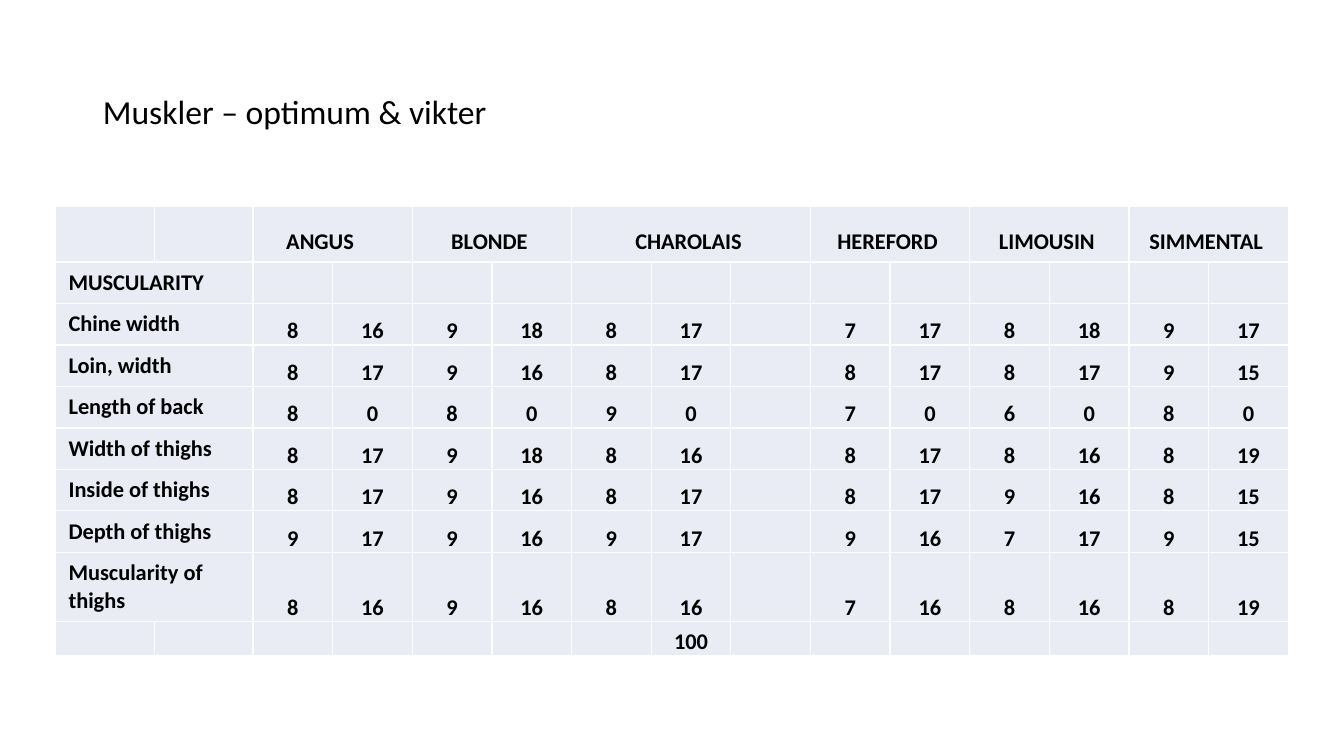
from dataclasses import dataclass

import pptx
import pptx.dml.color
import pptx.enum.text
import pptx.oxml
import pptx.oxml.ns
import pptx.table
import pptx.text.text
import pptx.util

Inches = pptx.util.Inches
Align = pptx.enum.text.PP_ALIGN
Anchor = pptx.enum.text.MSO_ANCHOR

BLACK = pptx.dml.color.RGBColor(0x00, 0x00, 0x00)
WHITE = pptx.dml.color.RGBColor(0xFF, 0xFF, 0xFF)
LAVENDER = pptx.dml.color.RGBColor(0xE9, 0xEB, 0xF5)

LABEL_SPAN = 2
COLUMN_WIDTHS = [0.98] * LABEL_SPAN + [0.79] * 13
ROW_HEIGHTS = [0.55] + [0.34] * 7 + [0.67, 0.34]
WIDE_MARGINS = (0.13, 0.07, 0.13, 0.07)
TIGHT_MARGINS = (0.01, 0.01, 0.01, 0)


@dataclass(frozen=True)
class Breed:
    name: str
    column: int
    span: int = 2
    right_margin: float = 0.13


@dataclass(frozen=True)
class Trait:
    label: str
    optimum_and_weight: tuple[tuple[int, int], ...] = ()


BREEDS = [
    Breed("ANGUS ", 2, right_margin=0.33),
    Breed("BLONDE ", 4),
    Breed("CHAROLAIS ", 6, span=3),
    Breed("HEREFORD ", 9),
    Breed("LIMOUSIN ", 11),
    Breed("SIMMENTAL ", 13),
]
TRAITS = [
    Trait("MUSCULARITY"),
    Trait("Chine width", ((8, 16), (9, 18), (8, 17), (7, 17), (8, 18), (9, 17))),
    Trait("Loin, width", ((8, 17), (9, 16), (8, 17), (8, 17), (8, 17), (9, 15))),
    Trait("Length of back", ((8, 0), (8, 0), (9, 0), (7, 0), (6, 0), (8, 0))),
    Trait("Width of thighs", ((8, 17), (9, 18), (8, 16), (8, 17), (8, 16), (8, 19))),
    Trait("Inside of thighs", ((8, 17), (9, 16), (8, 17), (8, 17), (9, 16), (8, 15))),
    Trait("Depth of thighs", ((9, 17), (9, 16), (9, 17), (9, 16), (7, 17), (9, 15))),
    Trait("Muscularity of thighs", ((8, 16), (9, 16), (8, 16), (7, 16), (8, 16), (8, 19))),
]
CHAROLAIS_WEIGHT_COLUMN = 7


def write(frame: pptx.text.text.TextFrame, text: str, *, size: int = 16, bold: bool = True,
          align: Align = Align.CENTER, line_spacing: float = 1.0) -> None:
    paragraph = frame.paragraphs[0]
    paragraph.alignment = align
    paragraph.line_spacing = line_spacing
    run = paragraph.add_run()
    run.text = text
    run.font.name = "Calibri"
    run.font.size = pptx.util.Pt(size)
    run.font.bold = bold
    run.font.color.rgb = BLACK


def set_margins(cell: pptx.table._Cell, margins: tuple[float, ...]) -> None:
    (cell.margin_left, cell.margin_top,
     cell.margin_right, cell.margin_bottom) = map(Inches, margins)


def style_cell(cell: pptx.table._Cell) -> None:
    set_margins(cell, TIGHT_MARGINS)
    cell.vertical_anchor = Anchor.BOTTOM
    cell.fill.solid()
    cell.fill.fore_color.rgb = LAVENDER
    properties = cell._tc.get_or_add_tcPr()
    for position, side in enumerate(("lnL", "lnR", "lnT", "lnB")):
        properties.insert(position, pptx.oxml.parse_xml(
            f'<a:{side} {pptx.oxml.ns.nsdecls("a")} w="12700"><a:solidFill>'
            f'<a:srgbClr val="{WHITE}"/></a:solidFill></a:{side}>'))


def fill_header(table: pptx.table.Table) -> None:
    for breed in BREEDS:
        cell = table.cell(0, breed.column)
        cell.merge(table.cell(0, breed.column + breed.span - 1))
        set_margins(cell, WIDE_MARGINS)
        cell.margin_right = Inches(breed.right_margin)
        write(cell.text_frame, breed.name)


def fill_trait(table: pptx.table.Table, row: int, trait: Trait) -> None:
    label = table.cell(row, 0)
    label.merge(table.cell(row, LABEL_SPAN - 1))
    set_margins(label, WIDE_MARGINS)
    write(label.text_frame, trait.label, align=Align.LEFT)
    for breed, pair in zip(BREEDS, trait.optimum_and_weight):
        for offset, number in enumerate(pair):
            write(table.cell(row, breed.column + offset).text_frame, str(number))


def main() -> None:
    presentation = pptx.Presentation()
    presentation.slide_width = Inches(13.33)
    presentation.slide_height = Inches(7.5)
    slide = presentation.slides.add_slide(presentation.slide_layouts.get_by_name("Title Only"))

    title = slide.shapes.title
    title.left, title.top = Inches(0.92), Inches(0.4)
    title.width, title.height = Inches(11.5), Inches(1.45)
    title.text_frame.vertical_anchor = Anchor.MIDDLE
    write(title.text_frame, "Muskler – optimum & vikter", size=24, bold=False,
          align=Align.LEFT, line_spacing=0.9)

    table = slide.shapes.add_table(
        len(ROW_HEIGHTS), len(COLUMN_WIDTHS),
        Inches(0.55), Inches(2.05), Inches(12.18), Inches(4.37)).table
    table.first_row = False
    table.horz_banding = False
    for column, width in zip(table.columns, COLUMN_WIDTHS):
        column.width = Inches(width)
    for row, height in zip(table.rows, ROW_HEIGHTS):
        row.height = Inches(height)
    for cell in table.iter_cells():
        style_cell(cell)

    fill_header(table)
    for row, trait in enumerate(TRAITS, start=1):
        fill_trait(table, row, trait)
    write(table.cell(len(ROW_HEIGHTS) - 1, CHAROLAIS_WEIGHT_COLUMN).text_frame, "100")

    presentation.save("out.pptx")


if __name__ == "__main__":
    main()
